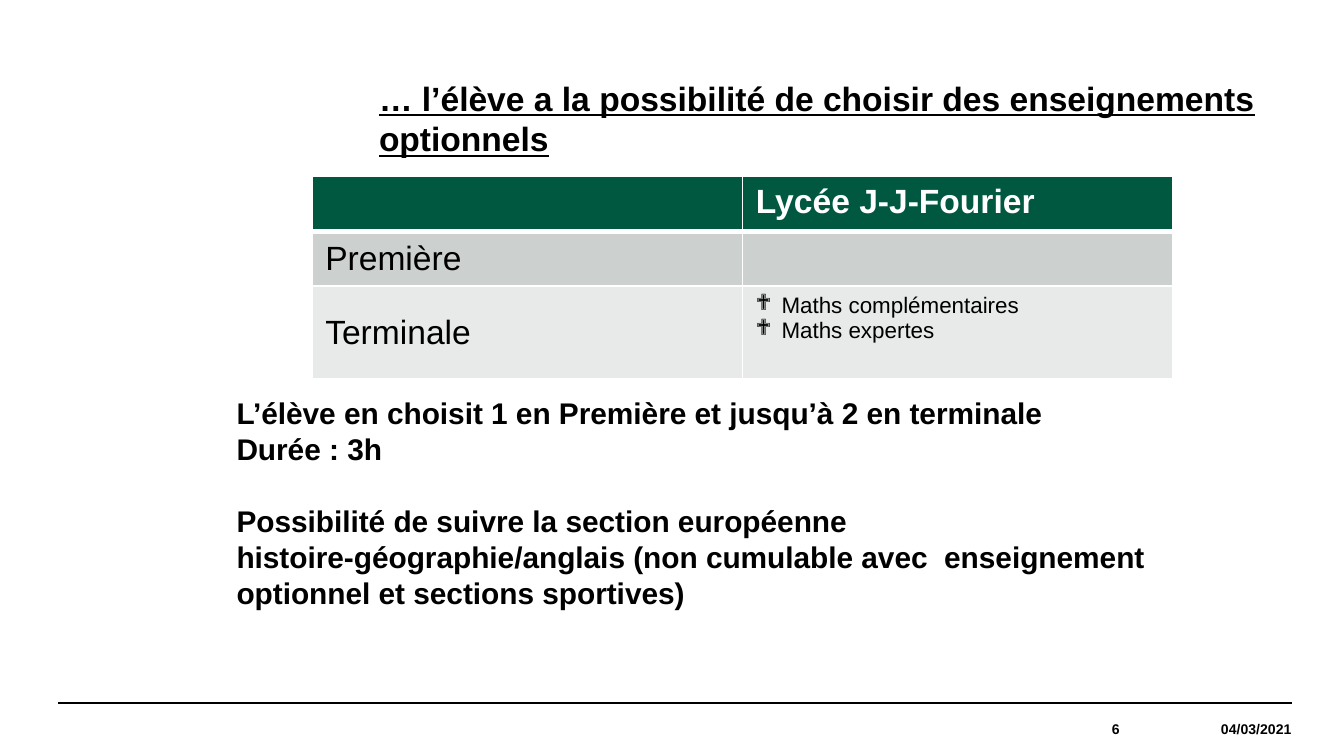
from dataclasses import dataclass

from lxml import etree
from pptx import Presentation
from pptx.dml.color import RGBColor
from pptx.enum.shapes import MSO_CONNECTOR
from pptx.enum.text import MSO_ANCHOR, MSO_AUTO_SIZE, PP_ALIGN
from pptx.oxml.ns import qn
from pptx.util import Inches, Pt

STRAIGHT = MSO_CONNECTOR.STRAIGHT
TOP, MIDDLE = MSO_ANCHOR.TOP, MSO_ANCHOR.MIDDLE
LEFT, RIGHT = PP_ALIGN.LEFT, PP_ALIGN.RIGHT
NO_AUTOFIT = MSO_AUTO_SIZE.NONE
SLIDE_WIDTH = 10
SLIDE_HEIGHT = SLIDE_WIDTH * 9 / 16


@dataclass(frozen=True)
class Theme:
    font: str = "Arial"
    bullet_font: str = "Wingdings"
    ink: str = "000000"
    paper: str = "FFFFFF"
    header: str = "005841"
    dark_band: str = "CCD1CF"
    light_band: str = "E7EAE9"
    title_size: float = 18
    body_size: float = 16
    bullet_size: float = 12
    footer_size: float = 7.5


@dataclass(frozen=True)
class Box:
    left: float
    top: float
    width: float
    height: float


@dataclass(frozen=True)
class FooterField:
    text: str
    box: Box


@dataclass(frozen=True)
class CellContent:
    lines: tuple[str, ...] = ()
    size: float = 18
    bulleted: bool = False
    anchor: MSO_ANCHOR = TOP


@dataclass(frozen=True)
class TableRow:
    fill: str
    height: float
    cells: tuple[CellContent, ...]


THEME = Theme()
TITLE = "… l’élève a la possibilité de choisir des enseignements optionnels"
BODY = (
    "L’élève en choisit 1 en Première et jusqu’à 2 en terminale",
    "Durée : 3h",
    "Possibilité de suivre la section européenne histoire-géographie/anglais "
    "(non cumulable avec  enseignement optionnel et sections sportives)",
)
ROWS = (
    TableRow(THEME.header, 0.41, (CellContent(), CellContent(("Lycée J-J-Fourier",)))),
    TableRow(THEME.dark_band, 0.41, (CellContent(("Première",), anchor=MIDDLE), CellContent())),
    TableRow(THEME.light_band, 0.69, (
        CellContent(("Terminale",), anchor=MIDDLE),
        CellContent(("Maths complémentaires", "Maths expertes"), THEME.bullet_size, True),
    )),
)
FOOTER = (
    FooterField("6", Box(6.85, 5.23, 1.48, 0.39)),
    FooterField("04/03/2021", Box(8.33, 5.23, 1.28, 0.39)),
)


def place(shape, box: Box) -> None:
    shape.left, shape.top = Inches(box.left), Inches(box.top)
    shape.width, shape.height = Inches(box.width), Inches(box.height)


def style_paragraph(paragraph, size: float, color: str = THEME.ink, bold: bool = True) -> None:
    font = paragraph.font
    font.name, font.size, font.bold = THEME.font, Pt(size), bold
    font.color.rgb = RGBColor.from_string(color)


def set_bullet(paragraph, symbol: str | None, indent: float = 0) -> None:
    properties = paragraph._p.get_or_add_pPr()
    properties.set("marL", str(Inches(indent)))
    properties.set("indent", str(-Inches(indent)))
    if symbol:
        etree.SubElement(properties, qn("a:buFont"), typeface=THEME.bullet_font)
        etree.SubElement(properties, qn("a:buChar"), char=symbol)
    else:
        etree.SubElement(properties, qn("a:buNone"))


def fill_placeholder(shape, box: Box, lines: tuple[str, ...], size: float) -> None:
    place(shape, box)
    frame = shape.text_frame
    frame.word_wrap, frame.auto_size = True, NO_AUTOFIT
    frame.vertical_anchor = TOP
    frame.text = "\n".join(lines)
    for paragraph in frame.paragraphs:
        set_bullet(paragraph, None)
        paragraph.alignment = LEFT
        paragraph.space_before = Pt(0)
        style_paragraph(paragraph, size)


def set_borders(cell, bottom: float, top: float) -> None:
    properties = cell._tc.get_or_add_tcPr()
    for side, width in (("L", 1), ("R", 1), ("T", top), ("B", bottom)):
        line = etree.SubElement(properties, qn(f"a:ln{side}"), w=str(Pt(width)))
        fill = etree.SubElement(line, qn("a:solidFill"))
        etree.SubElement(fill, qn("a:srgbClr"), val=THEME.paper)


def fill_cell(cell, content: CellContent, fill: str, row_index: int) -> None:
    is_header = row_index == 0
    set_borders(cell, bottom=3 if is_header else 1, top=3 if row_index == 1 else 1)
    cell.fill.solid()
    cell.fill.fore_color.rgb = RGBColor.from_string(fill)
    cell.vertical_anchor = content.anchor
    cell.text = "\n".join(content.lines)
    for paragraph in cell.text_frame.paragraphs:
        if content.bulleted:
            set_bullet(paragraph, "❖", 0.19)
        style_paragraph(paragraph, content.size, THEME.paper if is_header else THEME.ink, is_header)


def add_options_table(slide, box: Box) -> None:
    column_count = len(ROWS[0].cells)
    table = slide.shapes.add_table(
        len(ROWS), column_count,
        Inches(box.left), Inches(box.top), Inches(box.width), Inches(box.height),
    ).table
    for column in table.columns:
        column.width = Inches(box.width / column_count)
    for row_index, row in enumerate(ROWS):
        table.rows[row_index].height = Inches(row.height)
        for column_index, content in enumerate(row.cells):
            fill_cell(table.cell(row_index, column_index), content, row.fill, row_index)


def add_footer_field(slide, field: FooterField) -> None:
    box = field.box
    shape = slide.shapes.add_textbox(
        Inches(box.left), Inches(box.top), Inches(box.width), Inches(box.height)
    )
    frame = shape.text_frame
    frame.word_wrap, frame.vertical_anchor = True, MIDDLE
    frame.margin_left = frame.margin_right = frame.margin_top = frame.margin_bottom = 0
    frame.text = field.text
    paragraph = frame.paragraphs[0]
    paragraph.alignment = RIGHT
    style_paragraph(paragraph, THEME.footer_size)


def add_footer_line(slide) -> None:
    line = slide.shapes.add_connector(
        STRAIGHT, Inches(0.43), Inches(5.23), Inches(9.61), Inches(5.23)
    )
    line.line.color.rgb = RGBColor.from_string(THEME.ink)
    line.line.width = Pt(0.8)
    etree.SubElement(line._element.spPr, qn("a:effectLst"))


def main() -> None:
    presentation = Presentation()
    presentation.slide_width, presentation.slide_height = Inches(SLIDE_WIDTH), Inches(SLIDE_HEIGHT)
    slide = presentation.slides.add_slide(presentation.slide_layouts[1])
    add_footer_line(slide)
    for field in FOOTER:
        add_footer_field(slide, field)
    title, body = slide.shapes.title, slide.placeholders[1]
    fill_placeholder(title, Box(2.72, 0.53, 6.89, 0.71), (TITLE,), THEME.title_size)
    title.text_frame.paragraphs[0].font.underline = True
    add_options_table(slide, Box(2.32, 1.31, 6.41, 1.51))
    fill_placeholder(body, Box(1.66, 2.89, 7.24, 1.99), BODY, THEME.body_size)
    body.text_frame.paragraphs[-1].space_before = Pt(19.3)
    presentation.save("out.pptx")


if __name__ == "__main__":
    main()
